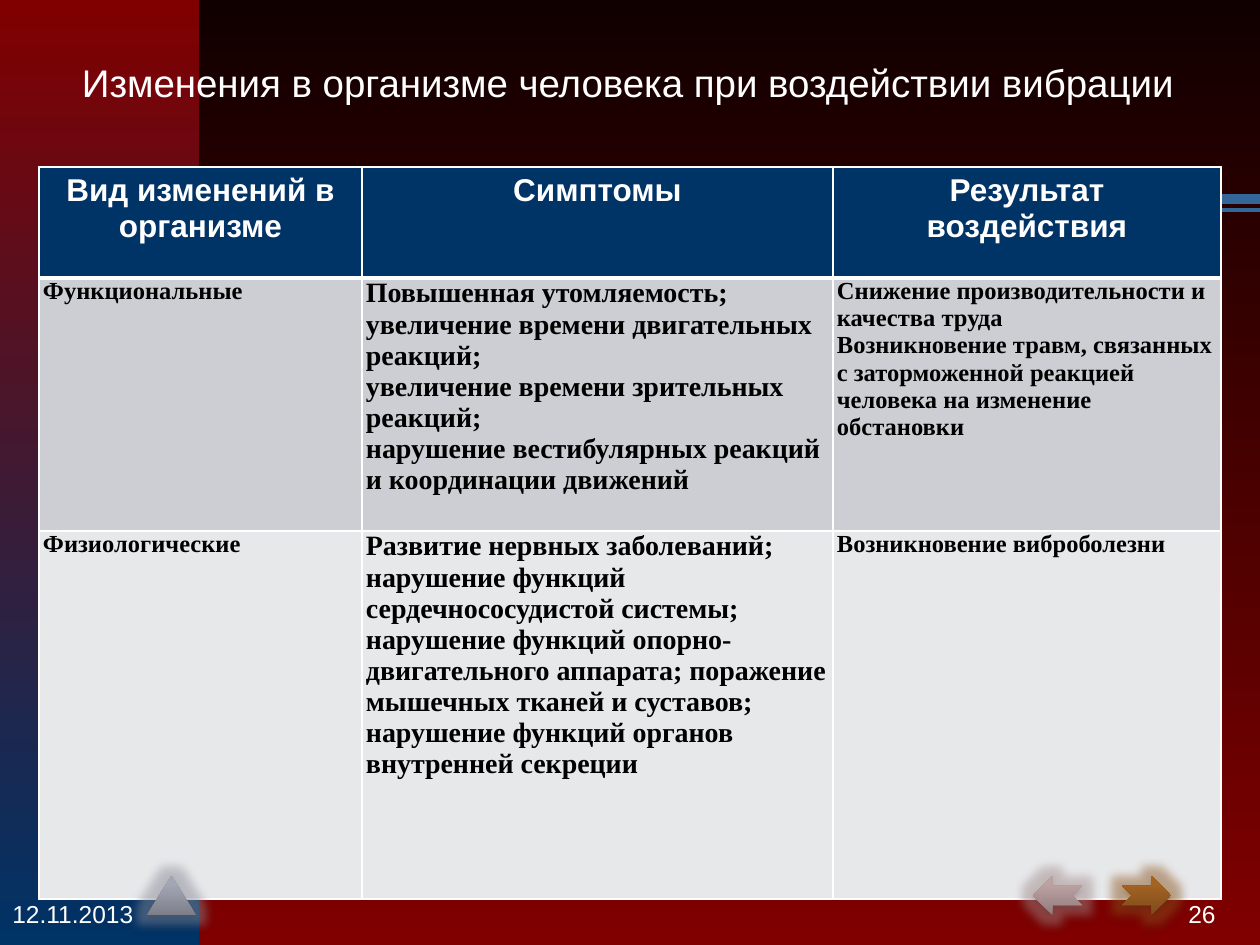
from lxml.etree import SubElement
from pptx import Presentation
from pptx.dml.color import RGBColor
from pptx.enum.shapes import MSO_CONNECTOR, MSO_SHAPE
from pptx.enum.text import MSO_ANCHOR, PP_ALIGN
from pptx.oxml.ns import qn
from pptx.util import Emu, Pt

EMU_PER_PX = 914400 / 126
WHITE, BLACK, NAVY, STEEL, RED = "FFFFFF", "000000", "003366", "336699", "800000"
SANS, SERIF = "Arial", "Times New Roman"


def px(length):
    return Emu(round(length * EMU_PER_PX))


def color(value):
    return RGBColor.from_string(value)


def add_color(parent, value, alpha=100):
    node = SubElement(parent, qn("a:srgbClr"), val=value)
    if alpha < 100:
        SubElement(node, qn("a:alpha"), val=str(alpha * 1000))


def write(frame, text, size=14, font=SANS, fill=WHITE, bold=False,
          align=PP_ALIGN.LEFT, anchor=MSO_ANCHOR.TOP):
    frame.word_wrap = True
    frame.vertical_anchor = anchor
    for index, line in enumerate(text.split("\n")):
        para = frame.add_paragraph() if index else frame.paragraphs[0]
        para.alignment = align
        para.space_before = Pt(0)
        span = para.add_run()
        span.text = line
        span.font.size = Pt(size)
        span.font.name = font
        span.font.bold = bold
        span.font.color.rgb = color(fill)


def set_gradient(fill, element, stops, angle):
    fill.gradient()
    fill.gradient_angle = 360 - angle
    stop_list = element.find(".//" + qn("a:gsLst"))
    for stop in list(stop_list):
        stop_list.remove(stop)
    for position, value in stops:
        stop = SubElement(stop_list, qn("a:gs"), pos=str(position * 1000))
        add_color(stop, value)


def set_borders(cell, widths):
    properties = cell._tc.get_or_add_tcPr()
    for index, (side, width) in enumerate(zip(("lnL", "lnR", "lnT", "lnB"), widths)):
        line = SubElement(properties, qn("a:" + side), w=str(Pt(width)))
        add_color(SubElement(line, qn("a:solidFill")), WHITE)
        properties.insert(index, line)


class SlideBuilder:
    def __init__(self, deck):
        self.page = deck.slides.add_slide(deck.slide_layouts[5])

    def background(self, stops):
        set_gradient(self.page.background.fill, self.page.element, stops, 90)

    def shape(self, kind, place, stops, angle):
        shape = self.page.shapes.add_shape(kind, *map(px, place))
        shape.shadow.inherit = False
        shape.line.fill.background()
        set_gradient(shape.fill, shape.element, stops, angle)
        return shape

    def line(self, left, right, y, width):
        line = self.page.shapes.add_connector(
            MSO_CONNECTOR.STRAIGHT, px(left), px(y), px(right), px(y))
        line.line.width = Pt(width)
        line.line.color.rgb = color(STEEL)
        SubElement(line.element.spPr, qn("a:effectLst"))

    def title(self, place, text):
        title = self.page.shapes.title
        title.left, title.top, title.width, title.height = map(px, place)
        title.text_frame.margin_top = px(10)
        write(title.text_frame, text, size=22, align=PP_ALIGN.CENTER)
        title.element.getparent().append(title.element)

    def text(self, place, text, **style):
        box = self.page.shapes.add_textbox(*map(px, place))
        write(box.text_frame, text, **style)

    def table(self, left, top, widths, heights, rows):
        frame = self.page.shapes.add_table(
            len(heights), len(widths), px(left), px(top), px(sum(widths)), px(sum(heights)))
        table = frame.table
        for column, width in zip(table.columns, widths):
            column.width = px(width)
        for row, height in zip(table.rows, heights):
            row.height = px(height)
        for r, (texts, fill) in enumerate(zip(rows, (NAVY, "CCCED3", "E7E8EA"))):
            for c, text in enumerate(texts):
                cell = table.cell(r, c)
                cell.fill.solid()
                cell.fill.fore_color.rgb = color(fill)
                set_borders(cell, (1, 1, 3 if r == 1 else 1, 3 if r == 0 else 1))
                if r == 0:
                    write(cell.text_frame, text, size=18, bold=True, align=PP_ALIGN.CENTER)
                else:
                    cell.margin_left = cell.margin_right = px(4)
                    cell.margin_top = cell.margin_bottom = 0
                    write(cell.text_frame, text, size=16 if c == 1 else 14,
                          font=SERIF, fill=BLACK, bold=True)

    def button(self, kind, left, shades, flipped=False):
        stops = list(zip((0, 80, 100), shades))
        shape = self.shape(kind, (left, 876, 49, 39), stops, 270)
        if flipped:
            shape.element.spPr.find(qn("a:xfrm")).set("flipH", "1")
        effects = shape.element.spPr.find(qn("a:effectLst"))
        add_color(SubElement(effects, qn("a:glow"), rad=str(Pt(11))), shades[1], 40)
        shadow = SubElement(effects, qn("a:outerShdw"), blurRad=str(Pt(3.1)),
                            dist=str(Pt(1.8)), dir="5400000", rotWithShape="0")
        add_color(shadow, BLACK, 35)


def main():
    deck = Presentation()
    deck.slide_width, deck.slide_height = px(1260), px(945)
    slide = SlideBuilder(deck)
    slide.background([(0, "100000"), (100, RED)])
    slide.shape(MSO_SHAPE.RECTANGLE, (0, 0, 199, 945), [(0, RED), (100, NAVY)], 90)
    slide.line(86, 1260, 210, 2)
    slide.line(86, 1260, 199, 6)
    slide.title((59, 49, 1138, 823), "Изменения в организме человека при воздействии вибрации")
    slide.table(39, 167, (323, 471, 388), (111, 253, 368), (
        ("Вид изменений в организме", "Симптомы", "Результат воздействия"),
        ("Функциональные",
         "Повышенная утомляемость;\n"
         "увеличение времени двигательных реакций;\n"
         "увеличение времени зрительных реакций;\n"
         "нарушение вестибулярных реакций и координации движений",
         "Снижение производительности и качества труда\n"
         "Возникновение травм, связанных с заторможенной реакцией человека "
         "на изменение обстановки"),
        ("Физиологические",
         "Развитие нервных заболеваний; нарушение функций сердечнососудистой системы; "
         "нарушение функций опорно-двигательного аппарата; поражение мышечных тканей "
         "и суставов; нарушение функций органов внутренней секреции",
         "Возникновение виброболезни"),
    ))
    slide.text((0, 882, 262, 63), "12.11.2013", anchor=MSO_ANCHOR.MIDDLE)
    slide.text((966, 882, 262, 63), "26", align=PP_ALIGN.RIGHT, anchor=MSO_ANCHOR.MIDDLE)
    slide.button(MSO_SHAPE.NOTCHED_RIGHT_ARROW, 1033, ("927C7C", "BDA2A2", "BFA2A2"), flipped=True)
    slide.button(MSO_SHAPE.FLOWCHART_EXTRACT, 147, ("7D808B", "A3A6B4", "A3A7B6"))
    slide.button(MSO_SHAPE.NOTCHED_RIGHT_ARROW, 1122, ("7E4C1B", "A36323", "A66320"))
    deck.save("out.pptx")


if __name__ == "__main__":
    main()
